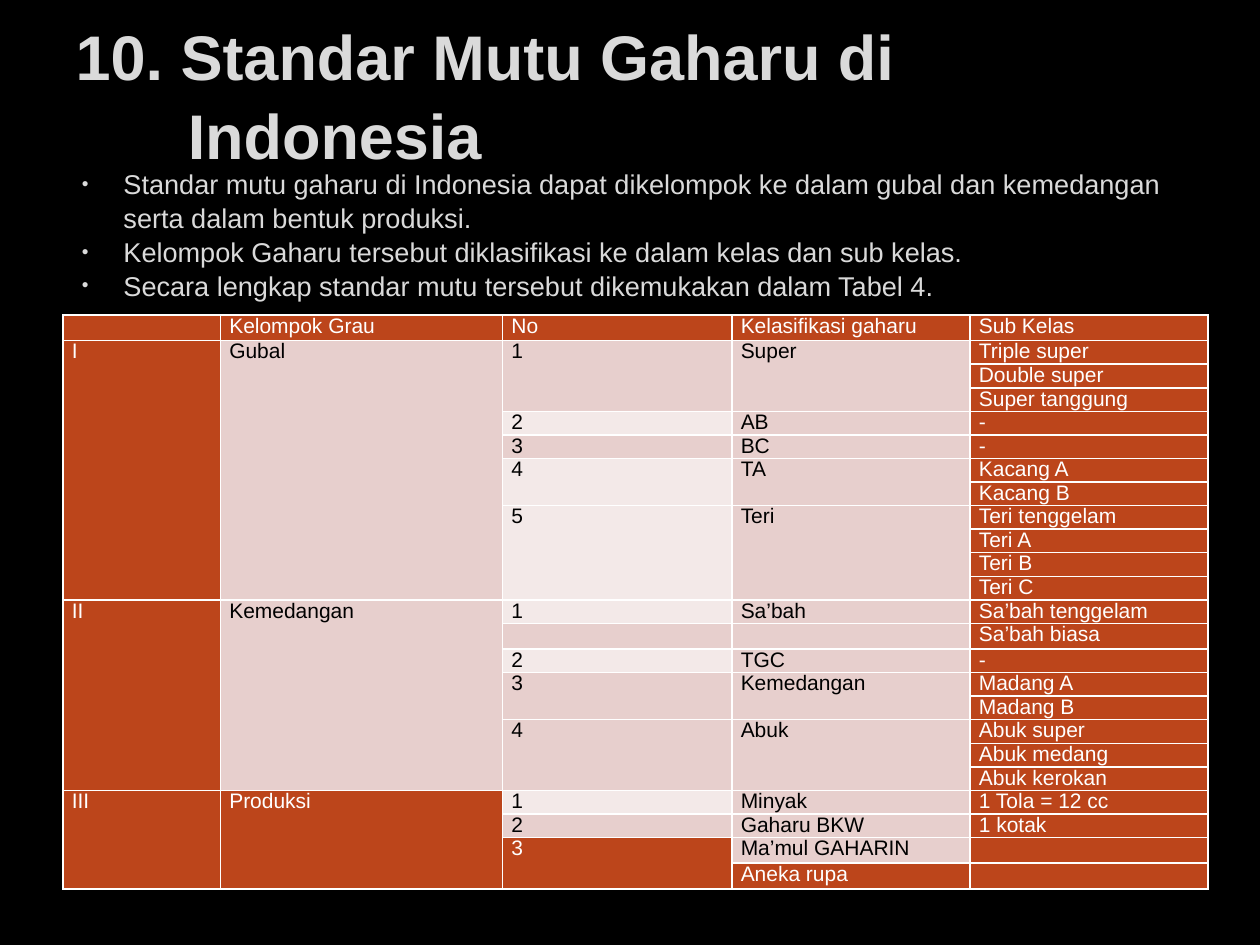
"""Build a slide on the quality standards of agarwood in Indonesia."""
from lxml import etree
from pptx import Presentation, util as u
from pptx.dml.color import RGBColor
from pptx.enum import text as t
from pptx.oxml import ns

BLACK = RGBColor(0, 0, 0)
WHITE = RGBColor(255, 255, 255)
GREY = RGBColor(0xDA, 0xDA, 0xDA)
RUST = RGBColor(0xBC, 0x45, 0x1B)
PINK = RGBColor(0xE7, 0xCF, 0xCD)
PALE = RGBColor(0xF3, 0xE9, 0xE8)

TITLE = "10. Standar Mutu Gaharu di Indonesia"
POINTS = [
    "Standar mutu gaharu di Indonesia dapat dikelompok ke dalam gubal dan "
    "kemedangan serta dalam bentuk produksi.",
    "Kelompok Gaharu tersebut diklasifikasi ke dalam kelas dan sub kelas.",
    "Secara lengkap standar mutu tersebut dikemukakan dalam Tabel 4.",
]
SUBS = [
    "Triple super", "Double super", "Super tanggung", "-", "-", "Kacang A",
    "Kacang B", "Teri tenggelam", "Teri A", "Teri B", "Teri C",
    "Sa’bah tenggelam", "Sa’bah biasa", "-", "Madang A", "Madang B",
    "Abuk super", "Abuk medang", "Abuk kerokan", "1 Tola = 12 cc", "1 kotak",
    "", "",
]
COLS = [
    (1.25, "", [("I", 11, RUST), ("II", 8, RUST), ("III", 4, RUST)]),
    (2.24, "Kelompok Grau",
     [("Gubal", 11, PINK), ("Kemedangan", 8, PINK), ("Produksi", 4, RUST)]),
    (1.82, "No",
     [("1", 3, PINK), ("2", 1, PALE), ("3", 1, PINK), ("4", 2, PALE),
      ("5", 4, PALE), ("1", 1, PALE), ("", 1, PINK), ("2", 1, PALE),
      ("3", 2, PINK), ("4", 3, PINK), ("1", 1, PALE), ("2", 1, PINK),
      ("3", 2, RUST)]),
    (1.89, "Kelasifikasi gaharu",
     [("Super", 3, PINK), ("AB", 1, PINK), ("BC", 1, PINK), ("TA", 2, PINK),
      ("Teri", 4, PINK), ("Sa’bah", 1, PINK), ("", 1, PINK),
      ("TGC", 1, PINK), ("Kemedangan", 2, PINK), ("Abuk", 3, PINK),
      ("Minyak", 1, PINK), ("Gaharu BKW", 1, PINK),
      ("Ma’mul GAHARIN", 1, PINK), ("Aneka rupa", 1, RUST)]),
    (1.89, "Sub Kelas", [(sub, 1, RUST) for sub in SUBS]),
]
ROWS = len(SUBS) + 1
HIGH = 4.49


def put(para, words, size=12, color=WHITE, bold=False, align=t.PP_ALIGN.LEFT,
        space=1.0, left=0, hang=0, mark=None):
    """Write one formatted paragraph."""
    para.alignment = align
    para.line_spacing = space
    para.space_before = para.space_after = u.Pt(0)
    props = para._p.get_or_add_pPr()
    props.set("marL", str(u.Inches(left)))
    props.set("indent", str(-u.Inches(hang)))
    if mark:
        tint = etree.SubElement(props, ns.qn("a:buClr"))
        etree.SubElement(tint, ns.qn("a:srgbClr"), val=str(color))
        etree.SubElement(props, ns.qn("a:buSzPct"), val="70000")
        etree.SubElement(props, ns.qn("a:buFont"), typeface="Arial")
        etree.SubElement(props, ns.qn("a:buChar"), char=mark)
    if not words:
        para._p.get_or_add_endParaRPr().set("sz", str(size * 100))
        return
    run = para.add_run()
    run.text = words
    font = run.font
    font.name, font.size, font.bold = "Arial", u.Pt(size), bold
    font.color.rgb = color


def place(shape, top, high, anchor):
    """Move a placeholder and ready its frame."""
    shape.left, shape.top = u.Inches(0.5), u.Inches(top)
    shape.width, shape.height = u.Inches(9.08), u.Inches(high)
    frame = shape.text_frame
    frame.word_wrap = True
    frame.auto_size = t.MSO_AUTO_SIZE.NONE
    frame.vertical_anchor = anchor
    return frame


def edge(cell):
    """Draw thin white lines round a cell."""
    props = cell._tc.get_or_add_tcPr()
    for spot, side in enumerate(("lnL", "lnR", "lnT", "lnB")):
        line = etree.Element(ns.qn("a:" + side), w=str(u.Pt(1)))
        fill = etree.SubElement(line, ns.qn("a:solidFill"))
        etree.SubElement(fill, ns.qn("a:srgbClr"), val=str(WHITE))
        props.insert(spot, line)


def fill_grid(slide):
    """Add the table of groups, classes and subclasses."""
    grid = slide.shapes.add_table(
        ROWS, len(COLS), u.Inches(0.5), u.Inches(2.5),
        u.Inches(9.08), u.Inches(HIGH)).table
    for row in grid.rows:
        row.height = u.Inches(HIGH / ROWS)
    for col, (wide, head, parts) in enumerate(COLS):
        grid.columns[col].width = u.Inches(wide)
        top = 0
        for words, span, tone in [(head, 1, RUST)] + parts:
            for row in range(top, top + span):
                cell = grid.cell(row, col)
                cell.margin_left = cell.margin_right = u.Inches(0.07)
                cell.margin_top = cell.margin_bottom = 0
                cell.fill.solid()
                cell.fill.fore_color.rgb = tone
                edge(cell)
                put(cell.text_frame.paragraphs[0],
                    words if row == top else "",
                    color=WHITE if tone == RUST else BLACK,
                    align=t.PP_ALIGN.JUSTIFY, space=0.97)
            if span > 1:
                grid.cell(top, col).merge(grid.cell(top + span - 1, col))
            top += span


def main():
    """Build and save the slide."""
    deck = Presentation()
    deck.slide_width, deck.slide_height = u.Inches(10), u.Inches(7.5)
    slide = deck.slides.add_slide(deck.slide_layouts[1])
    back = slide.background.fill
    back.solid()
    back.fore_color.rgb = BLACK
    frame = place(slide.shapes.title, 0.21, 1.06, t.MSO_ANCHOR.MIDDLE)
    put(frame.paragraphs[0], TITLE, size=36, color=GREY, bold=True,
        space=1.04, left=0.89, hang=0.89)
    frame = place(slide.placeholders[1], 1.27, 1.23, t.MSO_ANCHOR.TOP)
    for spot, point in enumerate(POINTS):
        para = frame.add_paragraph() if spot else frame.paragraphs[0]
        put(para, point, size=15.5, color=GREY, space=1.04,
            left=0.38, hang=0.33, mark="•")
    fill_grid(slide)
    deck.save("out.pptx")


if __name__ == "__main__":
    main()
